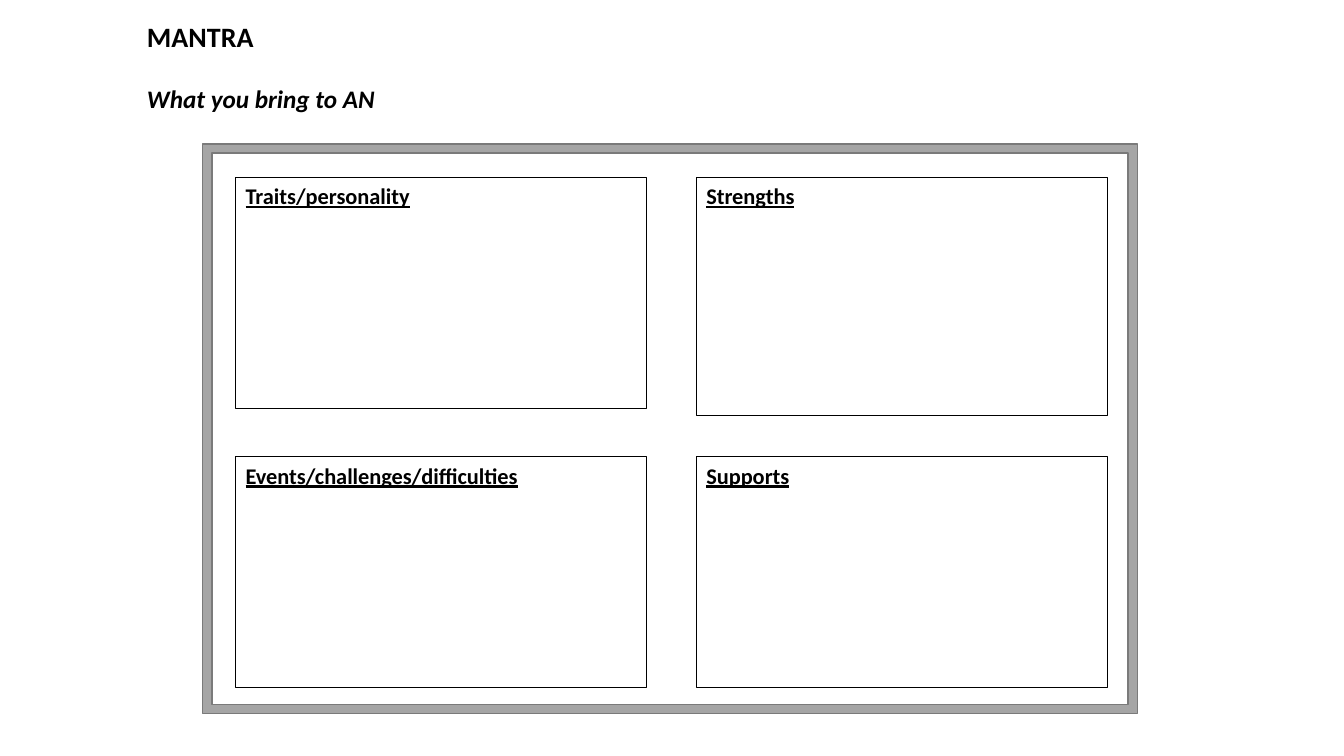
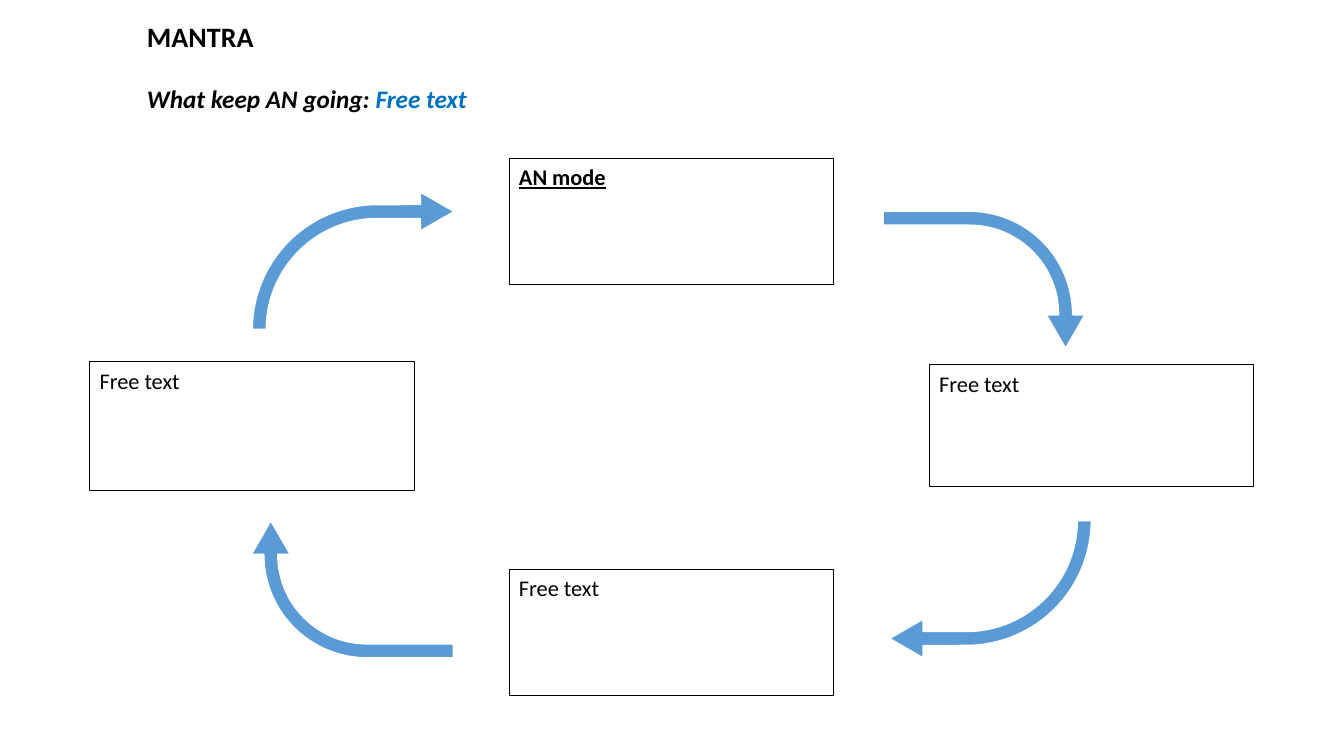
from pptx import Presentation
from pptx.dml.color import RGBColor
from pptx.enum.shapes import MSO_SHAPE
from pptx.enum.text import MSO_ANCHOR, MSO_AUTO_SIZE, PP_ALIGN
from pptx.util import Cm, Pt

BLACK = RGBColor(0x00, 0x00, 0x00)
WHITE = RGBColor(0xFF, 0xFF, 0xFF)
GREY = RGBColor(0xA5, 0xA5, 0xA5)
DARK_GREY = RGBColor(0x7A, 0x7A, 0x7A)
ARROW_BLUE = RGBColor(0x5B, 0x9B, 0xD5)
TEXT_BLUE = RGBColor(0x00, 0x70, 0xC0)
FONT = "Calibri"
TITLE_ONLY = 5


def style_font(font, size, bold=False, italic=False, underline=False):
    """Apply the shared typeface in black."""
    font.name = FONT
    font.size = Pt(size)
    font.bold = bold
    font.italic = italic
    font.underline = underline
    font.color.rgb = BLACK


def add_titled_slide(presentation, subtitle, prompt=""):
    """Add a slide headed MANTRA with an italic subtitle and optional blue prompt."""
    slide = presentation.slides.add_slide(presentation.slide_layouts[TITLE_ONLY])
    title = slide.shapes.title
    title.left, title.top, title.width, title.height = Cm(3.45), Cm(0.36), Cm(12), Cm(2.64)
    frame = title.text_frame
    frame.auto_size = MSO_AUTO_SIZE.NONE
    frame.vertical_anchor = MSO_ANCHOR.TOP
    heading, subheading = frame.paragraphs[0], frame.add_paragraph()
    heading.text = "MANTRA"
    style_font(heading.font, 20, bold=True)
    subheading.add_run().text = subtitle
    style_font(subheading.font, 18, bold=True, italic=True)
    if prompt:
        run = subheading.add_run()
        run.text = prompt
        run.font.color.rgb = TEXT_BLUE
    for paragraph in frame.paragraphs:
        paragraph.alignment = PP_ALIGN.LEFT
        paragraph.line_spacing = 1.0
        paragraph.space_before = Pt(0)
    subheading.space_before = Pt(22)
    return slide


def add_shape(slide, kind, left, top, width, height, line, line_width, fill=None):
    """Add a flat preset shape, with lengths in centimetres."""
    shape = slide.shapes.add_shape(kind, Cm(left), Cm(top), Cm(width), Cm(height))
    shape.shadow.inherit = False
    shape.line.color.rgb = line
    shape.line.width = Pt(line_width)
    if fill is None:
        shape.fill.background()
    else:
        shape.fill.solid()
        shape.fill.fore_color.rgb = fill
    return shape


def add_box(slide, text, left, top, width, height, heading=False):
    """Add an outlined box with its text at the top left."""
    box = add_shape(slide, MSO_SHAPE.RECTANGLE, left, top, width, height, BLACK, 0.75)
    frame = box.text_frame
    frame.word_wrap = True
    frame.vertical_anchor = MSO_ANCHOR.TOP
    paragraph = frame.paragraphs[0]
    paragraph.text = text
    paragraph.alignment = PP_ALIGN.LEFT
    style_font(paragraph.font, 16, bold=heading, underline=heading)


def add_bent_arrow(slide, left, top, width, height, rotation, bend):
    """Add a turned bent arrow."""
    arrow = add_shape(slide, MSO_SHAPE.BENT_ARROW, left, top, width, height,
                      WHITE, 1.5, ARROW_BLUE)
    arrow.rotation = rotation
    for index, value in enumerate((0.106, 0.144, 0.25, bend)):
        arrow.adjustments[index] = value


def build_resources_slide(presentation):
    """Build the framed grid of what a person brings."""
    slide = add_titled_slide(presentation, "What you bring to AN")
    left, right, upper, lower = 5.94, 17.55, 4.47, 11.51
    for text, x, y, height in (
        ("Traits/personality", left, upper, 5.82),
        ("Strengths", right, upper, 5.99),
        ("Events/challenges/difficulties", left, lower, 5.82),
        ("Supports", right, lower, 5.82),
    ):
        add_box(slide, text, x, y, 10.36, height, heading=True)
    border = add_shape(slide, MSO_SHAPE.FRAME, 5.11, 3.63, 23.55, 14.35,
                       DARK_GREY, 1, GREY)
    border.adjustments[0] = 0.016


def build_cycle_slide(presentation):
    """Build the cycle of four boxes joined by bent arrows."""
    slide = add_titled_slide(presentation, "What keep AN going: ", "Free text")
    box_width, middle = 8.18, 12.83
    add_box(slide, "AN mode", middle, 3.99, box_width, 3.18, heading=True)
    for left, top, height in ((2.26, 9.12, 3.25), (23.42, 9.19, 3.07), (middle, 14.35, 3.18)):
        add_box(slide, "Free text", left, top, box_width, height)
    long_side, short_side = 5.11, 3.48
    for left, top, rotation in ((6.35, 4.83, 0), (22.4, 13.11, 180)):
        add_bent_arrow(slide, left, top, long_side, short_side, rotation, 0.943)
    for left, top, rotation in ((23.06, 4.5, 90), (7.14, 12.29, 270)):
        add_bent_arrow(slide, left, top, short_side, long_side, rotation, 0.75)


def main():
    """Build and save the presentation."""
    presentation = Presentation()
    presentation.slide_width = Cm(33.87)
    presentation.slide_height = Cm(19.05)
    build_resources_slide(presentation)
    build_cycle_slide(presentation)
    presentation.save("out.pptx")


if __name__ == "__main__":
    main()
